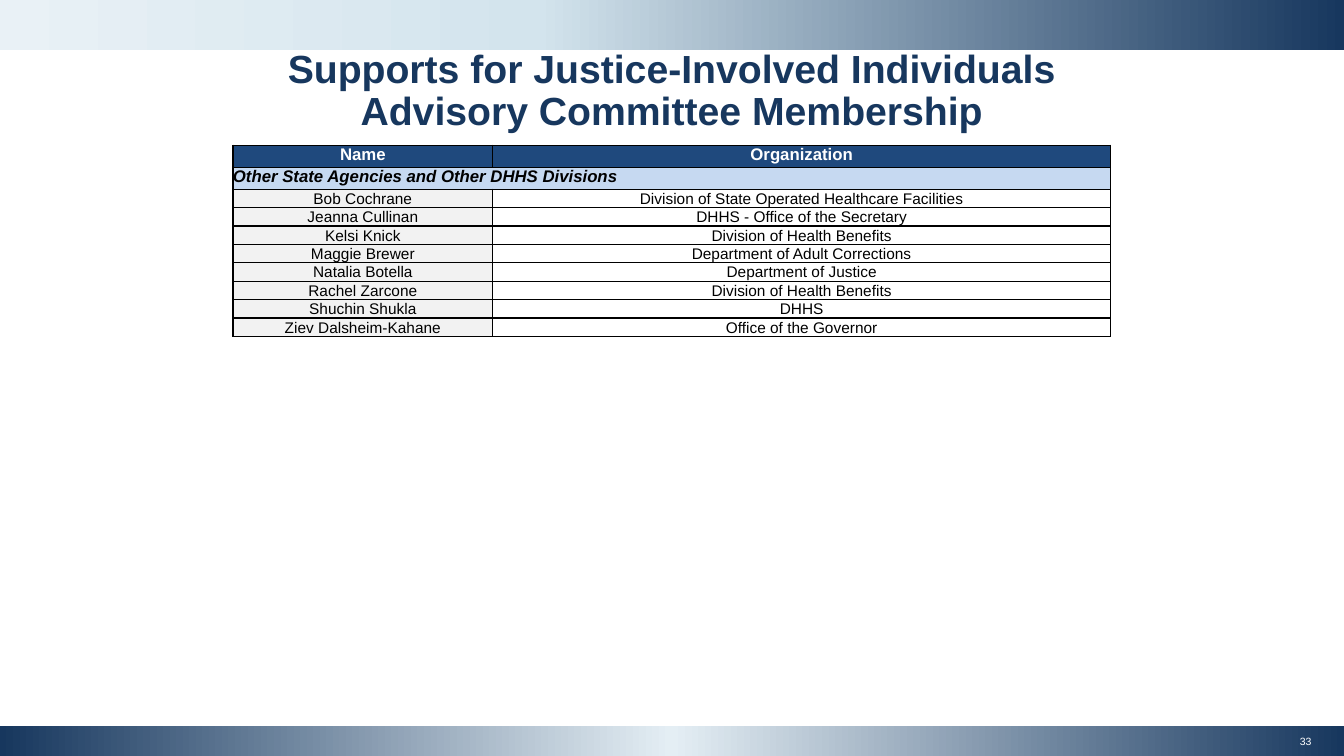
from copy import deepcopy
from dataclasses import dataclass

from lxml import etree
from pptx import Presentation
from pptx.dml.color import RGBColor
from pptx.enum.shapes import MSO_SHAPE
from pptx.enum.text import MSO_ANCHOR, MSO_AUTO_SIZE, PP_ALIGN
from pptx.oxml.ns import qn
from pptx.util import Cm, Pt

RECT = MSO_SHAPE.RECTANGLE
TOP, MIDDLE = MSO_ANCHOR.TOP, MSO_ANCHOR.MIDDLE
LEFT, CENTER = PP_ALIGN.LEFT, PP_ALIGN.CENTER
NO_FIT = MSO_AUTO_SIZE.NONE
WIDTH, HEIGHT = 33.87, 19.05


@dataclass(frozen=True)
class Theme:
    font: str = "Arial"
    navy: str = "17375E"
    head: str = "1F497D"
    group: str = "C6D9F1"
    name: str = "F2F2F2"
    white: str = "FFFFFF"
    black: str = "000000"
    title_size: float = 28
    head_size: float = 12
    body_size: float = 11
    page_size: float = 7.5


@dataclass(frozen=True)
class Band:
    top: float
    height: float
    stops: tuple[tuple[float, str], ...]


@dataclass(frozen=True)
class Member:
    name: str
    office: str


THEME = Theme()
BANDS = (
    Band(18.29, 0.76, ((0, THEME.navy), (0.5, "E4EEF4"), (1, THEME.navy))),
    Band(0, 1.27, ((0, THEME.navy), (0.6, "D3E4ED"), (1, "E9F1F6"))),
)
MEMBERS = (
    Member("Bob Cochrane", "Division of State Operated Healthcare Facilities"),
    Member("Jeanna Cullinan", "DHHS - Office of the Secretary"),
    Member("Kelsi Knick", "Division of Health Benefits"),
    Member("Maggie Brewer", "Department of Adult Corrections"),
    Member("Natalia Botella", "Department of Justice"),
    Member("Rachel Zarcone", "Division of Health Benefits"),
    Member("Shuchin Shukla", "DHHS"),
    Member("Ziev Dalsheim-Kahane", "Office of the Governor"),
)
COLUMNS = (6.55, 15.57)
HEAD_ROW, BODY_ROW = 0.53, 0.46


def write(frame, text: str, *, size: float, color: str, bold: bool = False,
          italic: bool = False, align=CENTER, spacing: float = 1.0) -> None:
    para = frame.paragraphs[0]
    para.alignment = align
    para.line_spacing = spacing
    run = para.add_run()
    run.text = text
    font = run.font
    font.name, font.size = THEME.font, Pt(size)
    font.bold, font.italic = bold, italic
    font.color.rgb = RGBColor.from_string(color)


def draw_band(slide, band: Band) -> None:
    shape = slide.shapes.add_shape(RECT, 0, Cm(band.top), Cm(WIDTH), Cm(band.height))
    shape.shadow.inherit = False
    shape.line.fill.background()
    shape.fill.gradient()
    shape.fill.gradient_angle = 180
    # The default gradient has two stops; a third goes between them.
    stops = next(shape.element.iter(qn("a:gsLst")))
    stops.insert(1, deepcopy(stops[0]))
    for stop, (place, color) in zip(shape.fill.gradient_stops, band.stops):
        stop.position = place
        stop.color.rgb = RGBColor.from_string(color)


def draw_title(slide, text: str) -> None:
    title = slide.shapes.title
    title.left, title.top = Cm(4.9), Cm(1.12)
    title.width, title.height = Cm(24.05), Cm(1.52)
    frame = title.text_frame
    frame.word_wrap, frame.auto_size = True, NO_FIT
    frame.vertical_anchor = TOP
    write(frame, text, size=THEME.title_size, color=THEME.navy, bold=True, spacing=0.9)
    slide.shapes.element.append(title.element)


def edge(cell) -> None:
    """Give a cell a thin black border on all sides."""
    props = cell._tc.get_or_add_tcPr()
    for side in ("lnL", "lnR", "lnT", "lnB"):
        line = etree.SubElement(props, qn(f"a:{side}"), w=str(Pt(1)))
        fill = etree.SubElement(line, qn("a:solidFill"))
        etree.SubElement(fill, qn("a:srgbClr"), val=THEME.black)


def fill_cell(cell, text: str, fill: str, *, pad: float, base: float, **style) -> None:
    cell.margin_left = cell.margin_right = cell.margin_top = Cm(pad)
    cell.margin_bottom = Cm(base)
    cell.vertical_anchor = MIDDLE
    cell.fill.solid()
    cell.fill.fore_color.rgb = RGBColor.from_string(fill)
    write(cell.text_frame, text, **style)


def draw_table(slide) -> None:
    heights = [HEAD_ROW] * 2 + [BODY_ROW] * len(MEMBERS)
    table = slide.shapes.add_table(
        len(heights), len(COLUMNS), Cm(5.87), Cm(3.66),
        Cm(sum(COLUMNS)), Cm(sum(heights))).table
    table.first_row = table.horz_banding = False
    for column, width in zip(table.columns, COLUMNS):
        column.width = Cm(width)
    for row, height in zip(table.rows, heights):
        row.height = Cm(height)
    for cell in table.iter_cells():
        edge(cell)

    bold = dict(pad=0, base=0.08, size=THEME.head_size, bold=True)
    for col, label in enumerate(("Name", "Organization")):
        fill_cell(table.cell(0, col), label, THEME.head, color=THEME.white, **bold)
    group = table.cell(1, 0)
    group.merge(table.cell(1, 1))
    fill_cell(group, "Other State Agencies and Other DHHS Divisions", THEME.group,
              color=THEME.black, italic=True, align=LEFT, **bold)

    plain = dict(pad=0.03, base=0, size=THEME.body_size, color=THEME.black)
    for row, member in enumerate(MEMBERS, start=2):
        fill_cell(table.cell(row, 0), member.name, THEME.name, **plain)
        fill_cell(table.cell(row, 1), member.office, THEME.white, **plain)


def draw_page(slide, number: str) -> None:
    box = slide.shapes.add_textbox(Cm(32.56), Cm(18.49), Cm(0.69), Cm(0.38))
    frame = box.text_frame
    frame.word_wrap = True
    frame.vertical_anchor = MIDDLE
    frame.margin_left = frame.margin_right = 0
    frame.margin_top = frame.margin_bottom = Cm(0.03)
    write(frame, number, size=THEME.page_size, color=THEME.white)


def main() -> None:
    deck = Presentation()
    deck.slide_width, deck.slide_height = Cm(WIDTH), Cm(HEIGHT)
    slide = deck.slides.add_slide(deck.slide_layouts.get_by_name("Title Only"))
    for band in BANDS:
        draw_band(slide, band)
    draw_title(slide, "Supports for Justice-Involved Individuals "
                      "Advisory Committee Membership")
    draw_table(slide)
    draw_page(slide, "33")
    deck.save("out.pptx")


if __name__ == "__main__":
    main()
